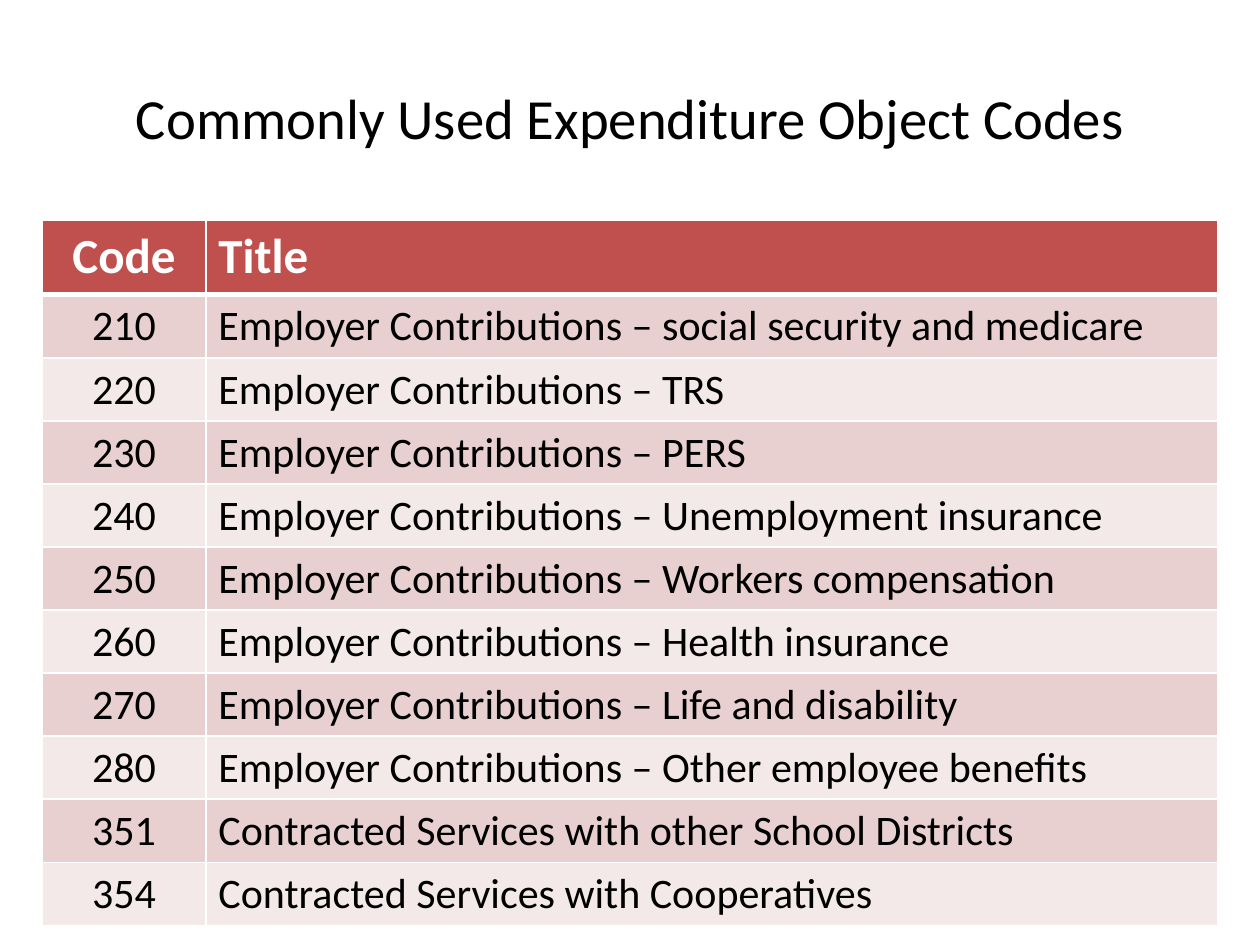
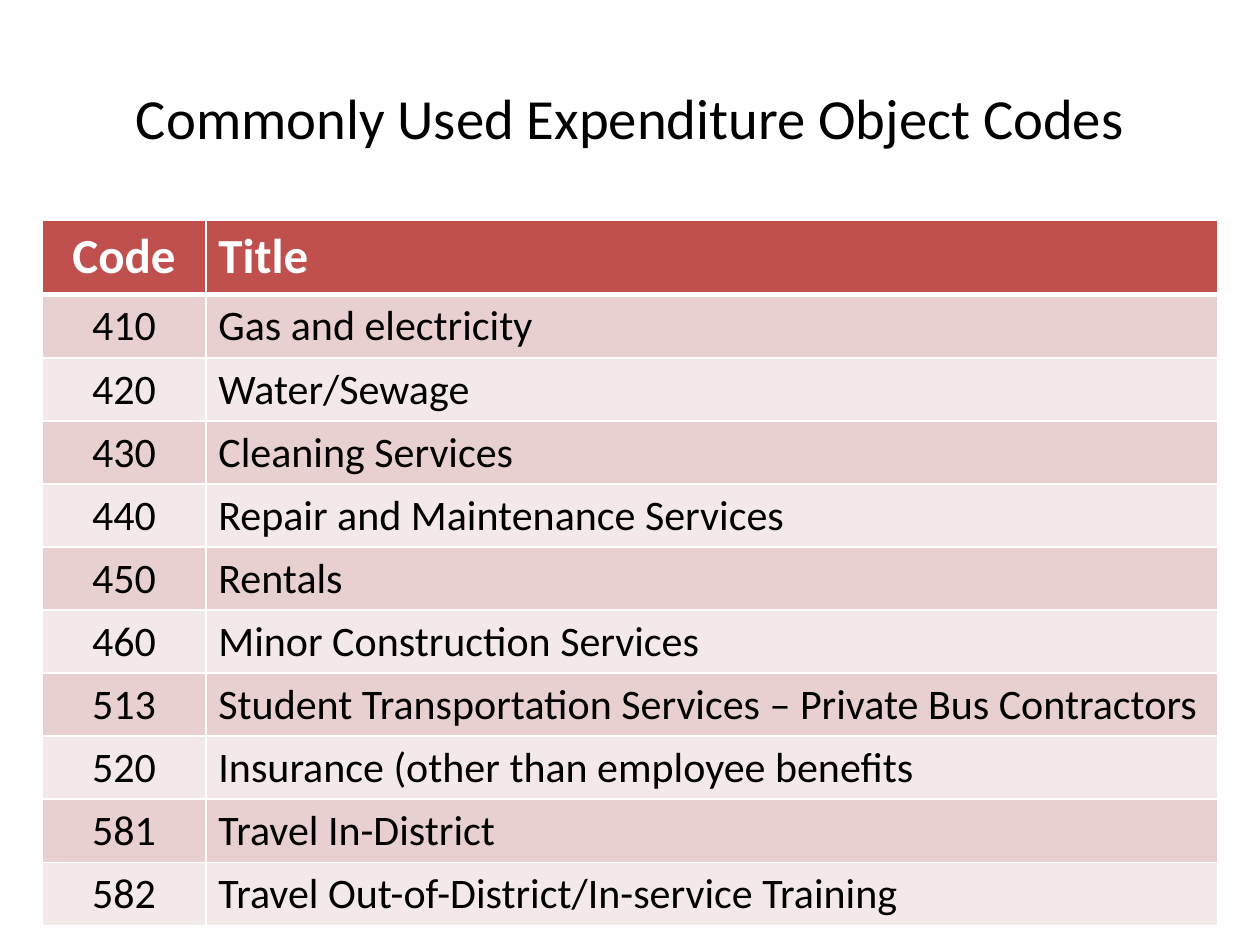
from dataclasses import dataclass

from lxml.etree import SubElement
from pptx import Presentation
from pptx.dml.color import RGBColor as Color
from pptx.enum.text import MSO_ANCHOR as Anchor, PP_ALIGN as Align
from pptx.oxml.ns import qn
from pptx.util import Inches, Pt


@dataclass(frozen=True)
class Theme:
    """Fonts, type sizes, line widths and colours shared by the slides."""
    font: str = "Calibri"
    title_size: float = 32.4
    header_size: float = 28
    body_size: float = 24
    thin_line: float = 1
    thick_line: float = 3
    ink: str = "000000"
    paper: str = "FFFFFF"
    header_fill: str = "C0504D"
    band_fills: tuple = ("E8D0D0", "F4E9E9")


class Deck:
    """Adds styled elements to the current slide on a 30 by 30 grid."""

    def __init__(self, theme, grid=30):
        self.theme = theme
        self.presentation = Presentation()
        self.presentation.slide_width = Inches(10)
        self.presentation.slide_height = Inches(7.5)
        self.column = self.presentation.slide_width / grid
        self.row = self.presentation.slide_height / grid
        self.slide = None

    def add_slide(self):
        """Start a blank slide."""
        blank_layout = self.presentation.slide_layouts[6]
        self.slide = self.presentation.slides.add_slide(blank_layout)

    def place(self, left, top, width, height):
        """Turn grid units into slide lengths."""
        return (round(left * self.column), round(top * self.row),
                round(width * self.column), round(height * self.row))

    def set_text(self, text_frame, text, size, color, bold=False, align=Align.LEFT):
        """Set one styled paragraph."""
        text_frame.text = text
        paragraph = text_frame.paragraphs[0]
        paragraph.alignment = align
        font = paragraph.runs[0].font
        font.name, font.size, font.bold = self.theme.font, Pt(size), bold
        font.color.rgb = Color.from_string(color)

    def add_title(self, text):
        """Add the centred slide title."""
        text_frame = self.slide.shapes.add_textbox(
            *self.place(2.75, 1.2, 24.5, 5)).text_frame
        text_frame.word_wrap = True
        text_frame.vertical_anchor = Anchor.MIDDLE
        self.set_text(text_frame, text, self.theme.title_size, self.theme.ink,
                      align=Align.CENTER)

    def add_border(self, cell, side, width):
        """Draw one side of a cell's border."""
        line = SubElement(cell._tc.get_or_add_tcPr(), qn(f"a:ln{side}"),
                          w=str(Pt(width)))
        fill = SubElement(line, qn("a:solidFill"))
        SubElement(fill, qn("a:srgbClr"), val=self.theme.paper)

    def style_cell(self, cell, row_index):
        """Apply borders and the header or band fill."""
        theme = self.theme
        heavy_side = {0: "B", 1: "T"}.get(row_index)
        for side in "LRTB":
            width = theme.thick_line if side == heavy_side else theme.thin_line
            self.add_border(cell, side, width)
        cell.fill.solid()
        band_fill = theme.band_fills[(row_index - 1) % 2]
        cell.fill.fore_color.rgb = Color.from_string(
            band_fill if row_index else theme.header_fill)

    def add_code_table(self, header, entries, header_height=2.36, body_height=2,
                       widths=(3.9, 24.1)):
        """Add a table of codes and titles."""
        theme = self.theme
        rows = [header, *entries]
        height = header_height + body_height * len(entries)
        table = self.slide.shapes.add_table(
            len(rows), len(widths), *self.place(1, 7, sum(widths), height)).table
        table.first_row = table.horz_banding = False
        for column, width in zip(table.columns, widths):
            column.width = round(width * self.column)
        for row_index, values in enumerate(rows):
            is_header = row_index == 0
            row_height = header_height if is_header else body_height
            table.rows[row_index].height = round(row_height * self.row)
            size, color = ((theme.header_size, theme.paper) if is_header
                           else (theme.body_size, theme.ink))
            for column_index, text in enumerate(values):
                cell = table.cell(row_index, column_index)
                align = Align.LEFT if column_index else Align.CENTER
                self.set_text(cell.text_frame, text, size, color, is_header, align)
                self.style_cell(cell, row_index)


TITLE = "Commonly Used Expenditure Object Codes"
HEADER = ("Code", "Title")
EMPLOYER_BENEFITS = (
    "social security and medicare", "TRS", "PERS", "Unemployment insurance",
    "Workers compensation", "Health insurance", "Life and disability",
    "Other employee benefits",
)
EMPLOYER_CODES = [
    *((str(210 + 10 * index), f"Employer Contributions – {benefit}")
      for index, benefit in enumerate(EMPLOYER_BENEFITS)),
    ("351", "Contracted Services with other School Districts"),
    ("354", "Contracted Services with Cooperatives"),
]
SERVICE_CODES = [
    ("410", "Gas and electricity"),
    ("420", "Water/Sewage"),
    ("430", "Cleaning Services"),
    ("440", "Repair and Maintenance Services"),
    ("450", "Rentals"),
    ("460", "Minor Construction Services"),
    ("513", "Student Transportation Services – Private Bus Contractors"),
    ("520", "Insurance (other than employee benefits"),
    ("581", "Travel In-District"),
    ("582", "Travel Out-of-District/In-service Training"),
]


def main():
    """Build and save the slides."""
    deck = Deck(Theme())
    for entries in (EMPLOYER_CODES, SERVICE_CODES):
        deck.add_slide()
        deck.add_title(TITLE)
        deck.add_code_table(HEADER, entries)
    deck.presentation.save("out.pptx")


if __name__ == "__main__":
    main()
